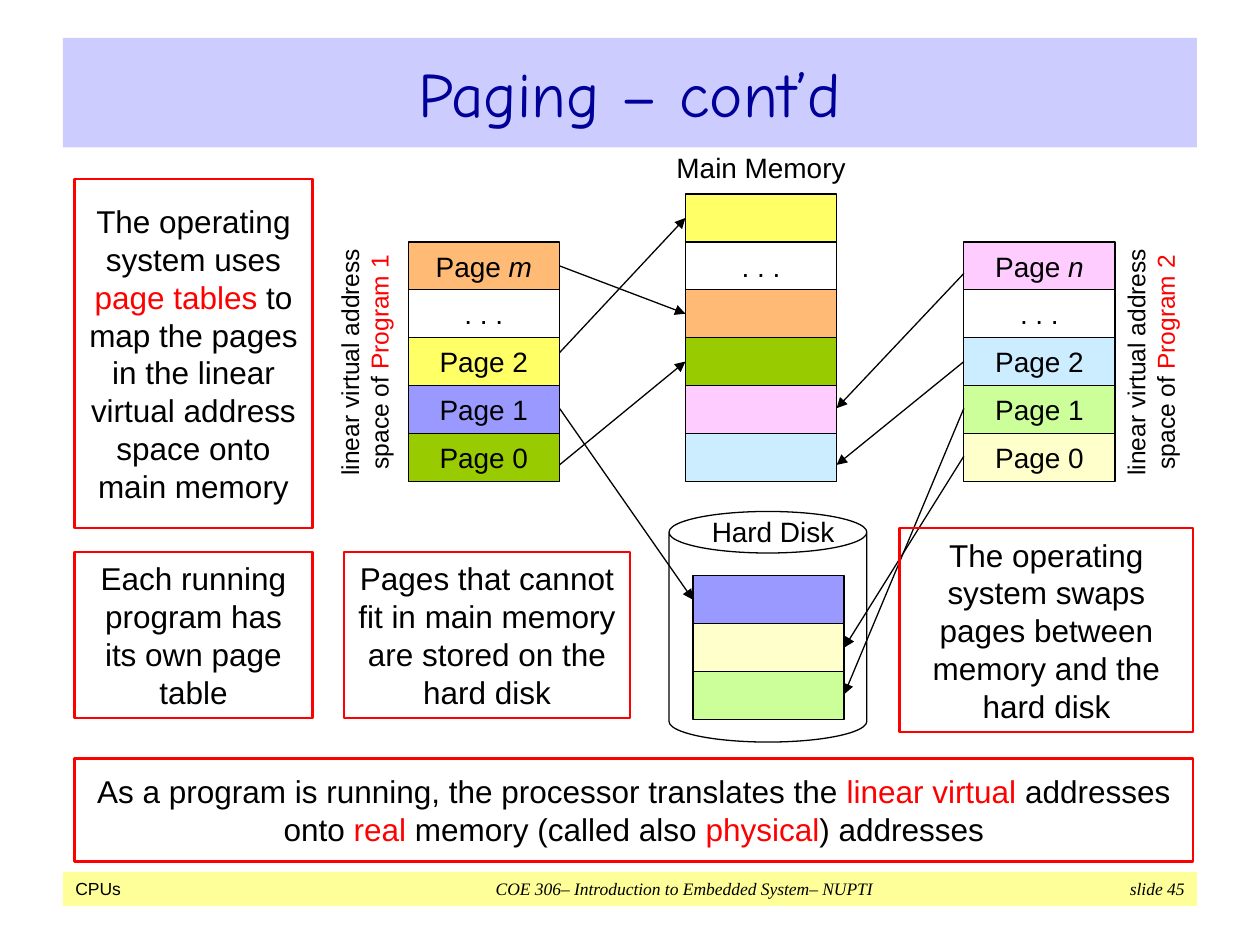
from dataclasses import dataclass

from lxml.etree import SubElement
from pptx import Presentation
from pptx.dml.color import RGBColor
from pptx.enum.shapes import MSO_CONNECTOR, MSO_SHAPE
from pptx.enum.text import MSO_ANCHOR, PP_ALIGN
from pptx.oxml.ns import qn
from pptx.util import Inches, Pt


@dataclass(frozen=True)
class Theme:
    ink: str = "000000"
    red: str = "FF0000"
    navy: str = "000099"
    title_bar: str = "CCCCFF"
    footer_bar: str = "FFFF99"
    orange: str = "FFBA75"
    yellow: str = "FFFF66"
    violet: str = "9999FF"
    green: str = "99CC00"
    pink: str = "FFCCFF"
    sky: str = "CCECFF"
    lime: str = "CCFF99"
    cream: str = "FFFFCC"
    body_font: str = "Arial"
    title_font: str = "Comic Neue"
    footer_font: str = "Times New Roman"
    title_size: int = 36
    note_size: int = 18
    page_size: int = 16
    side_size: int = 14
    footer_size: int = 10
    thin: float = 0.75
    thick: float = 1.5


THEME = Theme()
PAGE_WIDTH, PAGE_HEIGHT = 1.2, 0.38


def write(shape, text, size=THEME.note_size, font=THEME.body_font, color=THEME.ink,
          accent=THEME.red, italic=False, accent_italic=False,
          align=PP_ALIGN.CENTER, margins=(0.1, 0.05)):
    frame = shape.text_frame
    frame.word_wrap = True
    frame.vertical_anchor = MSO_ANCHOR.MIDDLE
    frame.margin_left = frame.margin_right = Inches(margins[0])
    frame.margin_top = frame.margin_bottom = Inches(margins[1])
    paragraph = frame.paragraphs[0]
    paragraph.alignment = align
    for index, part in enumerate(text.split("*")):
        if not part:
            continue
        accented = index % 2 == 1
        run = paragraph.add_run()
        run.text = part
        run.font.name = font
        run.font.size = Pt(size)
        run.font.italic = italic or (accented and accent_italic)
        run.font.color.rgb = RGBColor.from_string(accent if accented else color)


class SlideBuilder:
    def __init__(self, slide, theme):
        self.slide = slide
        self.theme = theme

    def box(self, left, top, width, height, fill=None, line=None, weight=THEME.thin,
            kind=MSO_SHAPE.RECTANGLE):
        shape = self.slide.shapes.add_shape(
            kind, Inches(left), Inches(top), Inches(width), Inches(height))
        shape.shadow.inherit = False
        if fill:
            shape.fill.solid()
            shape.fill.fore_color.rgb = RGBColor.from_string(fill)
        else:
            shape.fill.background()
        if line:
            shape.line.color.rgb = RGBColor.from_string(line)
            shape.line.width = Pt(weight)
        else:
            shape.line.fill.background()
        return shape

    def label(self, left, top, width, height, text, rotation=0, **text_format):
        label = self.slide.shapes.add_textbox(
            Inches(left), Inches(top), Inches(width), Inches(height))
        label.rotation = rotation
        write(label, text, **text_format)

    def note(self, left, top, width, height, text, **text_format):
        note = self.box(left, top, width, height, line=self.theme.red,
                        weight=self.theme.thick)
        write(note, text, **text_format)

    def pages(self, left, top, rows):
        for index, (text, fill) in enumerate(rows):
            page = self.box(left, top + index * PAGE_HEIGHT, PAGE_WIDTH, PAGE_HEIGHT,
                            fill, self.theme.ink)
            if text:
                write(page, text, size=self.theme.page_size,
                      accent=self.theme.ink, accent_italic=True)

    def arrow(self, start, end):
        arrow = self.slide.shapes.add_connector(
            MSO_CONNECTOR.STRAIGHT, *(Inches(value) for value in (*start, *end)))
        arrow.line.color.rgb = RGBColor.from_string(self.theme.ink)
        arrow.line.width = Pt(self.theme.thin)
        properties = arrow.element.spPr
        SubElement(properties.find(qn("a:ln")), qn("a:tailEnd"), type="triangle")
        SubElement(properties, qn("a:effectLst"))


def main():
    deck = Presentation()
    deck.slide_width, deck.slide_height = Inches(10), Inches(7.5)
    theme = THEME
    builder = SlideBuilder(deck.slides.add_slide(deck.slide_layouts[6]), theme)

    footer = builder.box(0.5, 6.92, 9, 0.27, theme.footer_bar)
    write(footer, "CPUs", size=theme.footer_size, align=PP_ALIGN.LEFT)
    footer_style = dict(size=theme.footer_size, font=theme.footer_font, italic=True)
    builder.label(3.43, 6.92, 4, 0.27,
                  "COE 306– Introduction to Embedded System– NUPTI", **footer_style)
    builder.label(8.5, 6.92, 1, 0.27, "slide 45", align=PP_ALIGN.RIGHT, **footer_style)

    title = builder.box(0.5, 0.3, 9, 0.87, theme.title_bar)
    write(title, "Paging – cont’d", size=theme.title_size, font=theme.title_font,
          color=theme.navy)

    program1_left, memory_left, disk_left, program2_left = 3.24, 5.44, 5.5, 7.65
    builder.pages(program1_left, 1.92, [
        ("Page *m*", theme.orange), (". . .", None), ("Page 2", theme.yellow),
        ("Page 1", theme.violet), ("Page 0", theme.green)])
    builder.pages(program2_left, 1.92, [
        ("Page *n*", theme.pink), (". . .", None), ("Page 2", theme.sky),
        ("Page 1", theme.lime), ("Page 0", theme.cream)])
    builder.pages(memory_left, 1.54, [
        ("", theme.yellow), (". . .", None), ("", theme.orange),
        ("", theme.green), ("", theme.pink), ("", theme.sky)])

    disk = builder.box(5.31, 4.06, 1.57, 1.83, line=theme.ink, kind=MSO_SHAPE.CAN)
    disk.adjustments[0] = 0.21
    builder.pages(disk_left, 4.57, [
        ("", theme.violet), ("", theme.cream), ("", theme.lime)])

    for left, top, width, name in [(5, 1.17, 2.08, "Main Memory"),
                                   (5.44, 4.06, 1.39, "Hard Disk")]:
        builder.label(left, top, width, 0.31, name, size=theme.page_size,
                      margins=(0.1, 0))
    for left, program in [(1.82, "Program 1"), (8.06, "Program 2")]:
        builder.label(left, 2.59, 2.14, 0.57,
                      f"linear virtual address space of *{program}*",
                      rotation=270, size=theme.side_size, margins=(0.08, 0.05))

    program1_edge = program1_left + PAGE_WIDTH
    memory_edge = memory_left + PAGE_WIDTH
    disk_edge = disk_left + PAGE_WIDTH
    for start_x, start_y, end_x, end_y in [
            (program1_edge, 2.8, memory_left, 1.73),
            (program1_edge, 2.11, memory_left, 2.49),
            (program1_edge, 3.69, memory_left, 2.87),
            (program1_edge, 3.24, disk_left, 4.76),
            (program2_left, 2.17, memory_edge, 3.24),
            (program2_left, 2.87, memory_edge, 3.69),
            (program2_left, 3.62, disk_edge, 5.14),
            (program2_left, 3.24, disk_edge, 5.51)]:
        builder.arrow((start_x, start_y), (end_x, end_y))

    builder.note(0.59, 1.42, 1.89, 2.77,
                 "The operating system uses *page tables* to map the pages in the "
                 "linear virtual address space onto main memory")
    builder.note(0.59, 4.38, 1.89, 1.32, "Each running program has its own page table")
    builder.note(2.73, 4.38, 2.27, 1.32,
                 "Pages that cannot fit in main memory are stored on the hard disk")
    builder.note(7.14, 4.19, 2.33, 1.62,
                 "The operating system swaps pages between memory and the hard disk",
                 margins=(0.04, 0.05))
    builder.note(0.59, 6.02, 8.88, 0.82,
                 "As a program is running, the processor translates the *linear virtual* "
                 "addresses onto *real* memory (called also *physical*) addresses")

    deck.save("out.pptx")


if __name__ == "__main__":
    main()
